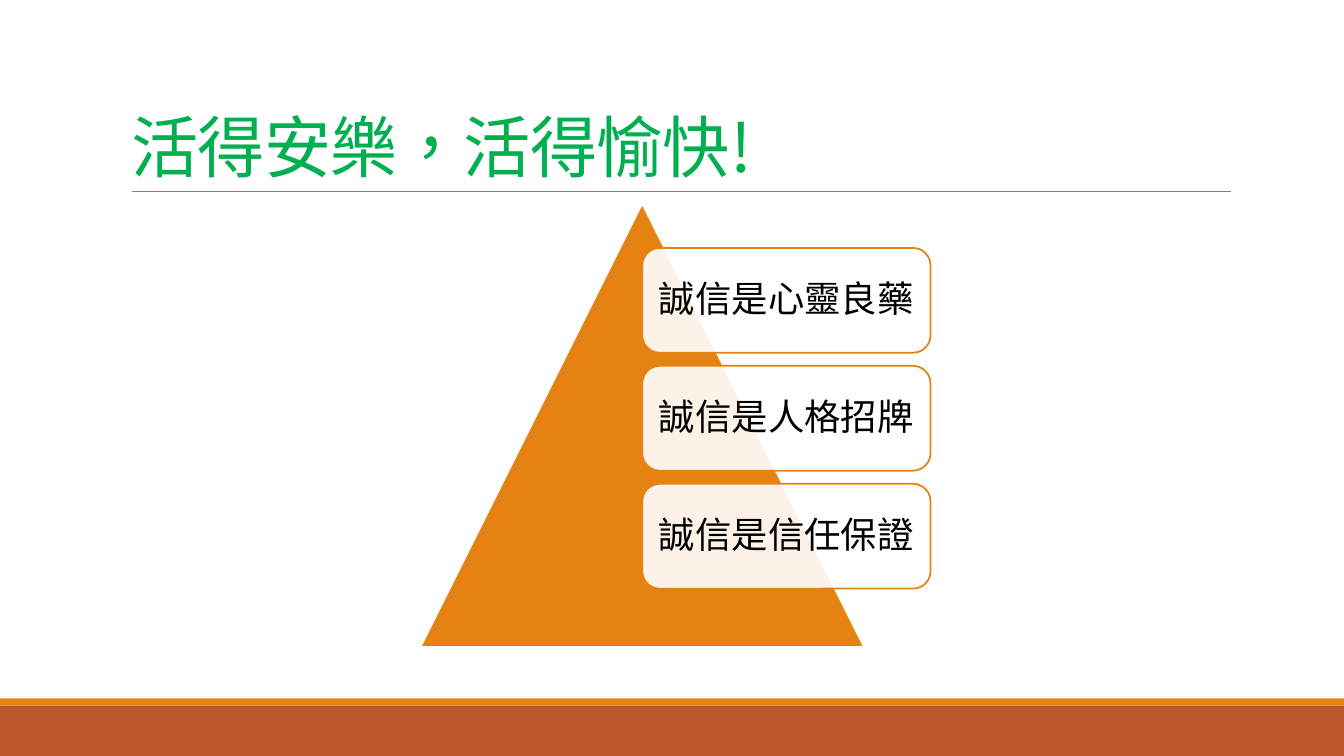
from pptx import Presentation
from pptx import util as u
from pptx.dml.color import RGBColor
from pptx.enum import lang, shapes, text
from pptx.oxml.ns import qn
from lxml import etree

GREEN = RGBColor(0x00, 0xB0, 0x50)
ORANGE = RGBColor(0xE4, 0x83, 0x12)
RUST = RGBColor(0xBD, 0x58, 0x2C)
GREY = RGBColor(0x80, 0x80, 0x80)
WHITE = RGBColor(0xFF, 0xFF, 0xFF)
BLACK = RGBColor(0x00, 0x00, 0x00)
CJK_FONT = "Noto Sans CJK SC"


def add_block(kind, left, top, width, height, fill, line=None):
    block = page.shapes.add_shape(kind, u.Inches(left), u.Inches(top), u.Inches(width), u.Inches(height))
    block.shadow.inherit = False
    block.fill.solid()
    block.fill.fore_color.rgb = fill
    if line is None:
        block.line.fill.background()
    else:
        block.line.color.rgb = line
        block.line.width = u.Pt(1.25)
    return block


def add_span(para, words, font, size, colour):
    span = para.add_run()
    span.text = words
    span.font.name = font
    span.font.size = u.Pt(size)
    span.font.color.rgb = colour
    span.font.language_id = lang.MSO_LANGUAGE_ID.TRADITIONAL_CHINESE
    props = span.font._element
    props.find(qn("a:latin")).addnext(etree.Element(qn("a:ea"), typeface=CJK_FONT))
    return props


deck = Presentation()
deck.slide_width = u.Inches(13.33)
deck.slide_height = u.Inches(7.5)
page = deck.slides.add_slide(deck.slide_layouts[5])

# Bands along the foot
add_block(shapes.MSO_SHAPE.RECTANGLE, 0, 7, 13.33, 0.5, RUST)
add_block(shapes.MSO_SHAPE.RECTANGLE, 0, 6.93, 13.33, 0.07, ORANGE)

# Title and the rule below it
title = page.shapes.title
title.left, title.top = u.Inches(1.2), u.Inches(0.31)
title.width, title.height = u.Inches(11), u.Inches(1.59)
title.text_frame.vertical_anchor = text.MSO_ANCHOR.BOTTOM
title.text_frame.auto_size = text.MSO_AUTO_SIZE.NONE
para = title.text_frame.paragraphs[0]
para.alignment = text.PP_ALIGN.LEFT
para.line_spacing = 0.85
title_props = add_span(para, "活得安樂，活得愉快!", CJK_FONT, 48, GREEN)
title_props.set("spc", "-50")

rule = page.shapes.add_connector(
    shapes.MSO_CONNECTOR.STRAIGHT, u.Inches(1.31), u.Inches(1.9), u.Inches(12.21), u.Inches(1.9))
rule.line.color.rgb = GREY
rule.line.width = u.Pt(0.5)
etree.SubElement(rule._element.spPr, qn("a:effectLst"))

# Pyramid
add_block(shapes.MSO_SHAPE.ISOSCELES_TRIANGLE, 4.17, 2.02, 4.4, 4.4, ORANGE, WHITE)

# Translucent boxes stacked over the pyramid
for row, words in enumerate(["誠信是心靈良藥", "誠信是人格招牌", "誠信是信任保證"]):
    box = add_block(shapes.MSO_SHAPE.ROUNDED_RECTANGLE, 6.37, 2.46 + 1.17 * row, 2.86, 1.04, WHITE, ORANGE)
    white = box._element.spPr.find(qn("a:solidFill")).find(qn("a:srgbClr"))
    etree.SubElement(white, qn("a:alpha"), val="90000")
    frame = box.text_frame
    frame.word_wrap = True
    frame.vertical_anchor = text.MSO_ANCHOR.MIDDLE
    frame.margin_left = frame.margin_right = u.Inches(0.08)
    para = frame.paragraphs[0]
    para.alignment = text.PP_ALIGN.CENTER
    para.line_spacing = 0.9
    add_span(para, words, "Calibri", 26, BLACK)

deck.save("out.pptx")
